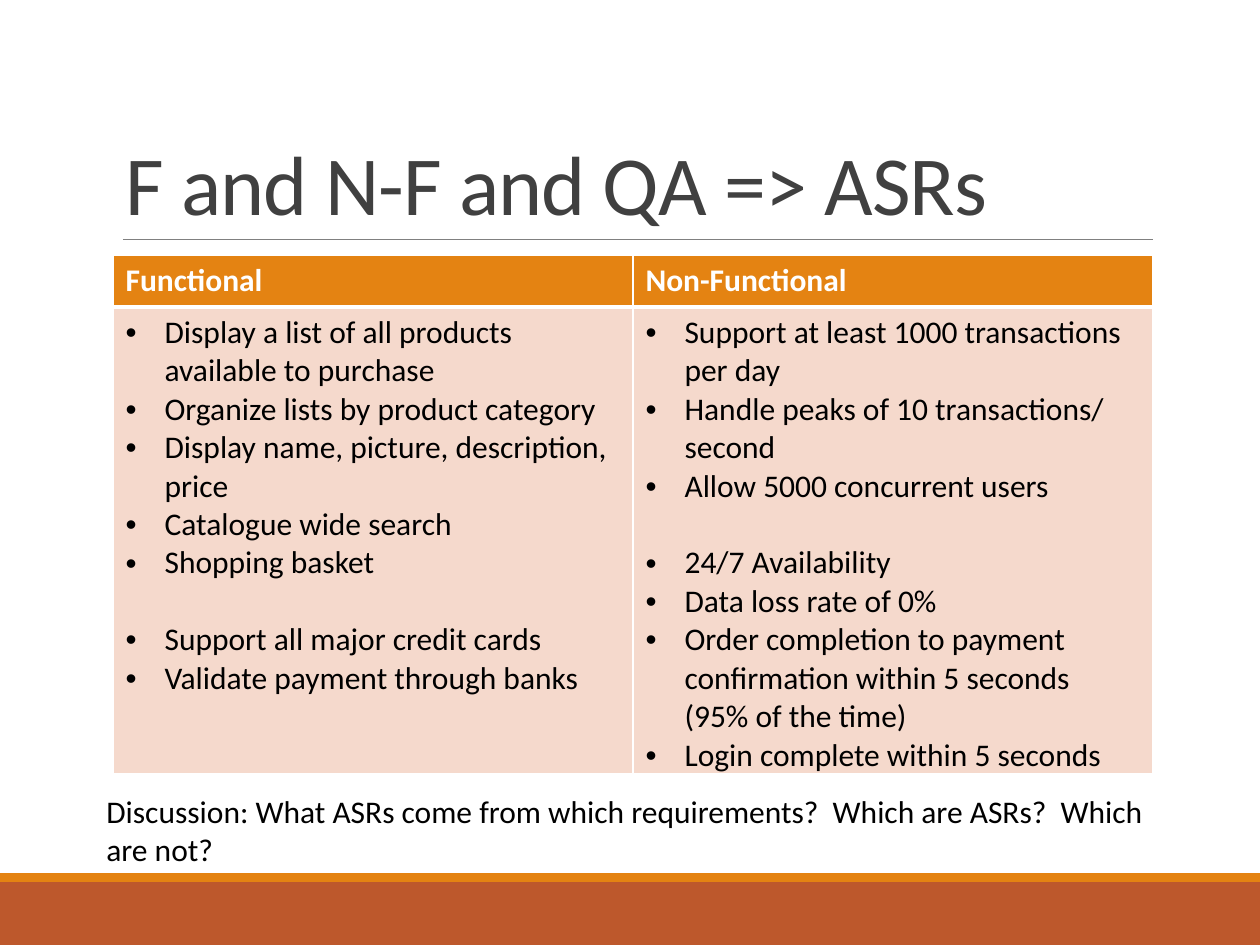
import pptx
import pptx.util
import pptx.dml.color
import pptx.enum.shapes
import pptx.enum.text
import pptx.oxml
import pptx.oxml.ns

RGB = pptx.dml.color.RGBColor
WHITE = RGB(0xFF, 0xFF, 0xFF)
BLACK = RGB(0, 0, 0)
RUST = RGB(0xBD, 0x58, 0x2C)
ORANGE = RGB(0xE4, 0x83, 0x12)
PEACH = RGB(0xF5, 0xD9, 0xCC)
GREY = RGB(0x80, 0x80, 0x80)
DARK = RGB(0x40, 0x40, 0x40)
FONT = "Calibri"
SCALE = 914400 / 126  # EMU in one px

# Each column: a heading, then groups of points set apart by a gap
COLS = [
    ("Functional", [
        ["Display a list of all products available to purchase",
         "Organize lists by product category",
         "Display name, picture, description, price",
         "Catalogue wide search",
         "Shopping basket"],
        ["Support all major credit cards",
         "Validate payment through banks"],
    ]),
    ("Non-Functional", [
        ["Support at least 1000 transactions per day",
         "Handle peaks of 10 transactions/ second",
         "Allow 5000 concurrent users"],
        ["24/7 Availability",
         "Data loss rate of 0%",
         "Order completion to payment confirmation within 5 seconds "
         "(95% of the time)",
         "Login complete within 5 seconds"],
    ]),
]


def px(n):
    return pptx.util.Emu(round(n * SCALE))


def add_run(para, text, size, color, bold=False):
    run = para.add_run()
    run.text = text
    font = run.font
    font.name, font.size, font.bold = FONT, pptx.util.Pt(size), bold
    font.color.rgb = color
    return run


def add_node(parent, xml):
    space = pptx.oxml.ns.nsdecls("a")
    parent.append(pptx.oxml.parse_xml(xml.replace("NS", space)))


def add_text(slide, x, y, w, h):
    frame = slide.shapes.add_textbox(px(x), px(y), px(w), px(h)).text_frame
    frame.word_wrap = True
    return frame


def add_foot(slide, x, y, w, h):
    # Thin strip above a broad band
    strip = 9
    for top, tall, color in ((y + strip, h - strip, RUST), (y, strip, ORANGE)):
        bar = slide.shapes.add_shape(
            pptx.enum.shapes.MSO_SHAPE.RECTANGLE,
            px(x), px(top), px(w), px(tall))
        bar.shadow.inherit = False
        bar.fill.solid()
        bar.fill.fore_color.rgb = color
        bar.line.fill.background()


def add_title(slide, x, y, w, h):
    # Rule under the title
    rule = slide.shapes.add_connector(
        pptx.enum.shapes.MSO_CONNECTOR.STRAIGHT,
        px(x + 10), px(y + h), px(x + w), px(y + h))
    rule.line.color.rgb = GREY
    rule.line.width = pptx.util.Pt(0.5)
    add_node(rule.element.spPr, "<a:effectLst NS/>")
    # Title text
    frame = add_text(slide, x, y, w, h)
    frame.vertical_anchor = pptx.enum.text.MSO_ANCHOR.BOTTOM
    para = frame.paragraphs[0]
    para.line_spacing = 0.85
    run = add_run(para, "F and N-F and QA => ASRs", 48, DARK)
    run.font.element.set("spc", "-50") if hasattr(run.font, "element") \
        else run._r.get_or_add_rPr().set("spc", "-50")


def style_cell(cell, color, top, base):
    props = cell._tc.get_or_add_tcPr()
    for side, width in (("L", 1), ("R", 1), ("T", top), ("B", base)):
        add_node(props, f'<a:ln{side} NS w="{width * 12700}"><a:solidFill>'
                        f'<a:srgbClr val="{WHITE}"/></a:solidFill></a:ln{side}>')
    cell.fill.solid()
    cell.fill.fore_color.rgb = color


def add_points(frame, groups):
    para = None
    for index, group in enumerate(groups):
        for place, text in enumerate(group):
            para = frame.add_paragraph() if para else frame.paragraphs[0]
            if index and place == 0:
                para.space_before = pptx.util.Pt(22)
            props = para._p.get_or_add_pPr()
            props.set("marL", str(px(39)))
            props.set("indent", str(-px(39)))
            add_node(props, '<a:buFont NS typeface="Arial"/>')
            add_node(props, '<a:buChar NS char="•"/>')
            add_run(para, text, 18, BLACK)


def add_needs(slide, x, y, w, h):
    head = 52
    table = slide.shapes.add_table(
        2, len(COLS), px(x), px(y), px(w), px(h)).table
    table.horz_banding = False
    table.rows[0].height = px(head)
    table.rows[1].height = px(h - head)
    for col, (name, groups) in enumerate(COLS):
        table.columns[col].width = px(w / len(COLS))
        top, body = table.cell(0, col), table.cell(1, col)
        style_cell(top, ORANGE, 1, 3)
        style_cell(body, PEACH, 3, 1)
        add_run(top.text_frame.paragraphs[0], name, 18, WHITE, True)
        add_points(body.text_frame, groups)


def add_ask(slide, x, y, w, h):
    frame = add_text(slide, x, y, w, h)
    add_run(frame.paragraphs[0],
            "Discussion: What ASRs come from which requirements?  "
            "Which are ASRs?  Which are not?", 18, BLACK)


def main():
    deck = pptx.Presentation()
    deck.slide_width, deck.slide_height = px(1260), px(945)
    slide = deck.slides.add_slide(deck.slide_layouts[6])
    add_foot(slide, 0, 873, 1260, 72)
    add_title(slide, 113, 39, 1040, 200)
    add_needs(slide, 113, 255, 1040, 518)
    add_ask(slide, 94, 786, 1071, 89)
    deck.save("out.pptx")


if __name__ == "__main__":
    main()
